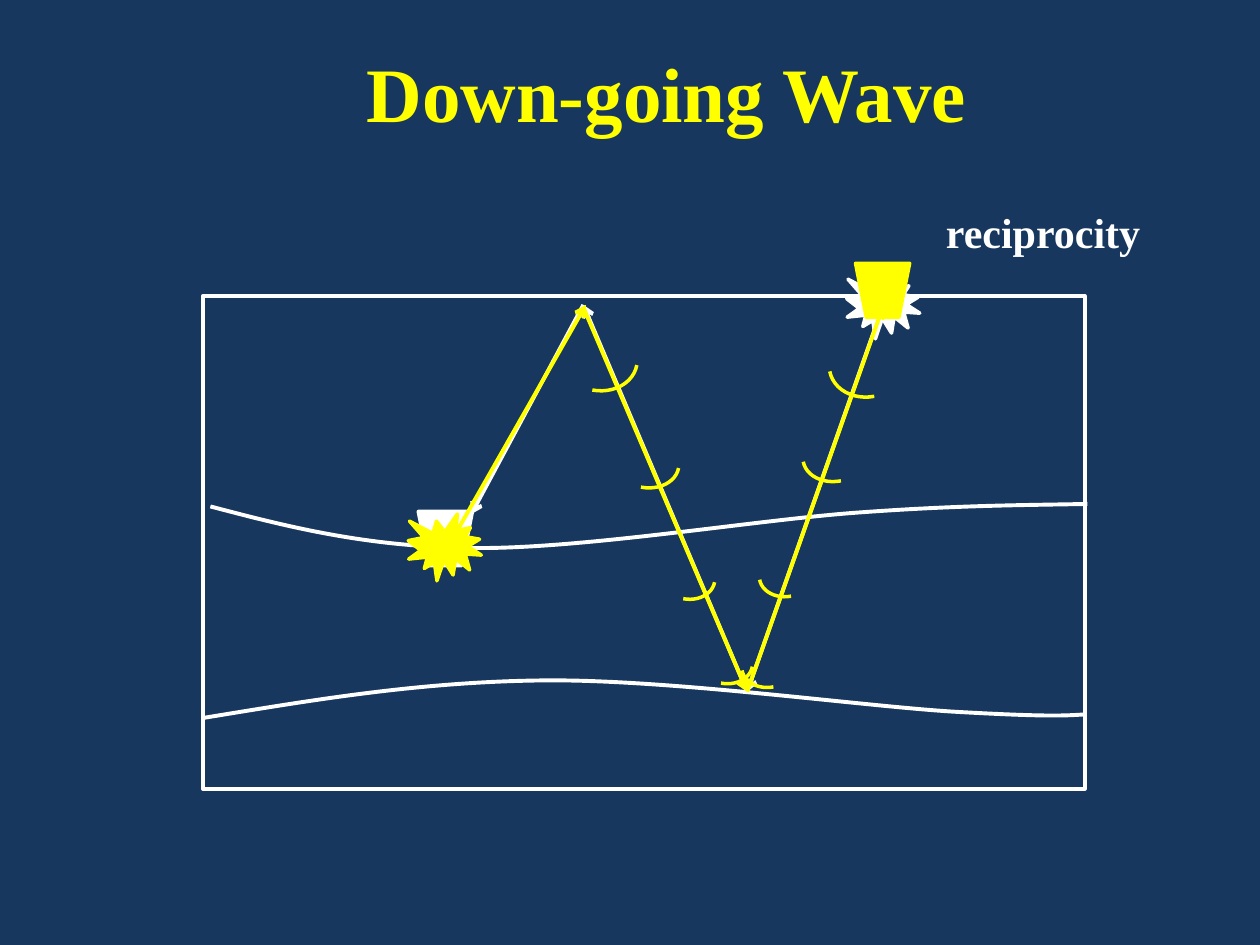
import pptx
import pptx.dml.color
import pptx.enum.shapes
import pptx.enum.text
import pptx.oxml
import pptx.oxml.ns
import pptx.util

KIND = pptx.enum.shapes.MSO_SHAPE
WHITE, GOLD, NAVY = "FFFFFF", "FFFF00", "17375E"
FONT = "Times New Roman"
COLS, ROWS = 100, 75
CELL = pptx.util.Inches(0.1)
SEAL, CUP = (5.8, 5.3), (4.3, 4.3)


def size(n):
    return round(n * CELL)


def tint(code):
    return pptx.dml.color.RGBColor.from_string(code)


def tag(host, name, **attrs):
    node = pptx.oxml.parse_xml(f"<a:{name} {pptx.oxml.ns.nsdecls('a')}/>")
    for key, value in attrs.items():
        node.set(key, value)
    host.append(node)
    return node


def style(item, hue, width, fill=None):
    item.line.color.rgb = tint(hue)
    item.line.width = pptx.util.Pt(width)
    item.shadow.inherit = False
    if fill:
        item.fill.solid()
        item.fill.fore_color.rgb = tint(fill)
    else:
        item.fill.background()


def shape(host, kind, box, at, dims, hue, width=2, fill=None):
    """Place a preset shape at a grid offset from the box's corner."""
    item = host.shapes.add_shape(kind, size(box[0] + at[0]), size(box[1] + at[1]),
                                 *map(size, dims))
    style(item, hue, width, fill)
    return item


def ray(host, box, start, end, hue, tip):
    ends = [size(o + v) for point in (start, end) for o, v in zip(box, point)]
    item = host.shapes.add_connector(pptx.enum.shapes.MSO_CONNECTOR.STRAIGHT, *ends)
    item.line.color.rgb = tint(hue)
    item.line.width = pptx.util.Pt(2.25)
    tag(item.line._get_or_add_ln(), tip, type="arrow")
    tag(item._element.spPr, "effectLst")


def curve(host, box, points):
    """Draw a cubic path: a start, then two handles and an end per segment."""
    spots = [(size(box[0] + x), size(box[1] + y)) for x, y in points]
    pen = host.shapes.build_freeform(*spots[0])
    pen.add_line_segments(spots[1:], close=False)
    item = pen.convert_to_shape()
    route = item._element.spPr.find(".//" + pptx.oxml.ns.qn("a:path"))
    steps = route.findall(pptx.oxml.ns.qn("a:lnTo"))
    for i in range(0, len(steps), 3):
        bend = tag(route, "cubicBezTo")
        for step in steps[i:i + 3]:
            bend.append(step[0])
            route.remove(step)
    style(item, WHITE, 2.25)


def label(slide, box, words, points, hue, before=None):
    item = slide.shapes.add_textbox(*map(size, box))
    frame = item.text_frame
    frame.word_wrap = True
    frame.auto_size = pptx.enum.text.MSO_AUTO_SIZE.SHAPE_TO_FIT_TEXT
    para = frame.paragraphs[0]
    if before:
        tag(tag(para._p.get_or_add_pPr(), "spcBef"), "spcPct", val=before)
    run = para.add_run()
    run.text = words
    run.font.name = FONT
    run.font.size = pptx.util.Pt(points)
    run.font.bold = True
    run.font.color.rgb = tint(hue)


def layers(slide, box):
    shape(slide, KIND.RECTANGLE, box, (0, 0), box[2:], WHITE, 2.25)
    curve(slide, box, [(0.6, 16.7), (6.7, 18.3), (12.9, 19.9), (21.4, 20),
                       (30, 20.1), (43.7, 17.8), (51.8, 17.2),
                       (59.9, 16.6), (65.1, 16.6), (70.2, 16.5)])
    curve(slide, box, [(-0.1, 33.5), (8.5, 32.1), (17.1, 30.6), (27.1, 30.5),
                       (37.1, 30.4), (52.7, 32.6), (59.9, 33),
                       (67, 33.4), (68.5, 33.3), (70, 33.2)])


def direct(slide, box):
    """White path from the surface source to the buried receiver."""
    group = slide.shapes.add_group_shape()
    shape(group, KIND.FLOWCHART_MANUAL_OPERATION, box, (17.1, 17.1), CUP, WHITE, fill=WHITE)
    stops = [(54, 0.7), (43.2, 31.4), (30.2, 0.7), (21.3, 17.3)]
    for start, end in zip(stops, stops[1:]):
        ray(group, box, start, end, WHITE, "tailEnd")
    shape(group, KIND.EXPLOSION1, box, (51.1, -1.9), SEAL, WHITE, fill=WHITE)


def swapped(slide, box):
    """Yellow path with source and receiver exchanged."""
    group = slide.shapes.add_group_shape()
    for start, end in [((54, 0.8), (43.2, 31.4)), ((43.2, 31.4), (30.2, 0.9)),
                       ((30.4, 0.7), (19.4, 20))]:
        ray(group, box, start, end, GOLD, "headEnd")
    shape(group, KIND.EXPLOSION1, box, (16.3, 17.3), SEAL, GOLD, fill=GOLD)
    shape(group, KIND.FLOWCHART_MANUAL_OPERATION, box, (51.8, -2.6), CUP, GOLD, fill=GOLD)


def fronts(slide, box):
    """Pairs of wavefront arcs, mirrored across the reflection point."""
    pairs = [((28.8, 1.8), (50.2, 2.3), (5.2, 6.2)),
             ((33.1, 10.5), (48.2, 10), (4.1, 5.3)),
             ((36.7, 20.1), (44.6, 19.9), (3.5, 4.4)),
             ((39.7, 26.8), (43.2, 27.1), (3.5, 4.4))]
    turn = 100.8
    for left, right, dims in pairs:
        group = slide.shapes.add_group_shape()
        shape(group, KIND.ARC, box, left, dims, GOLD).rotation = turn
        twin = shape(group, KIND.ARC, box, right, dims, GOLD)
        twin.rotation = 360 - turn
        twin._element.spPr.get_or_add_xfrm().set("flipH", "1")


def main():
    deck = pptx.Presentation()
    deck.slide_width, deck.slide_height = size(COLS), size(ROWS)
    slide = deck.slides.add_slide(deck.slide_layouts[6])
    slide.background.fill.solid()
    slide.background.fill.fore_color.rgb = tint(NAVY)
    label(slide, (28.1, 3.1, 60.2, 8.4), "Down-going Wave", 44, GOLD, "50000")
    earth = (16.1, 23.5, 70, 39.1)
    for part in (layers, direct, swapped, fronts):
        part(slide, earth)
    label(slide, (74.1, 15.9, 20, 5), "reciprocity", 24, WHITE)
    deck.save("out.pptx")


if __name__ == "__main__":
    main()
